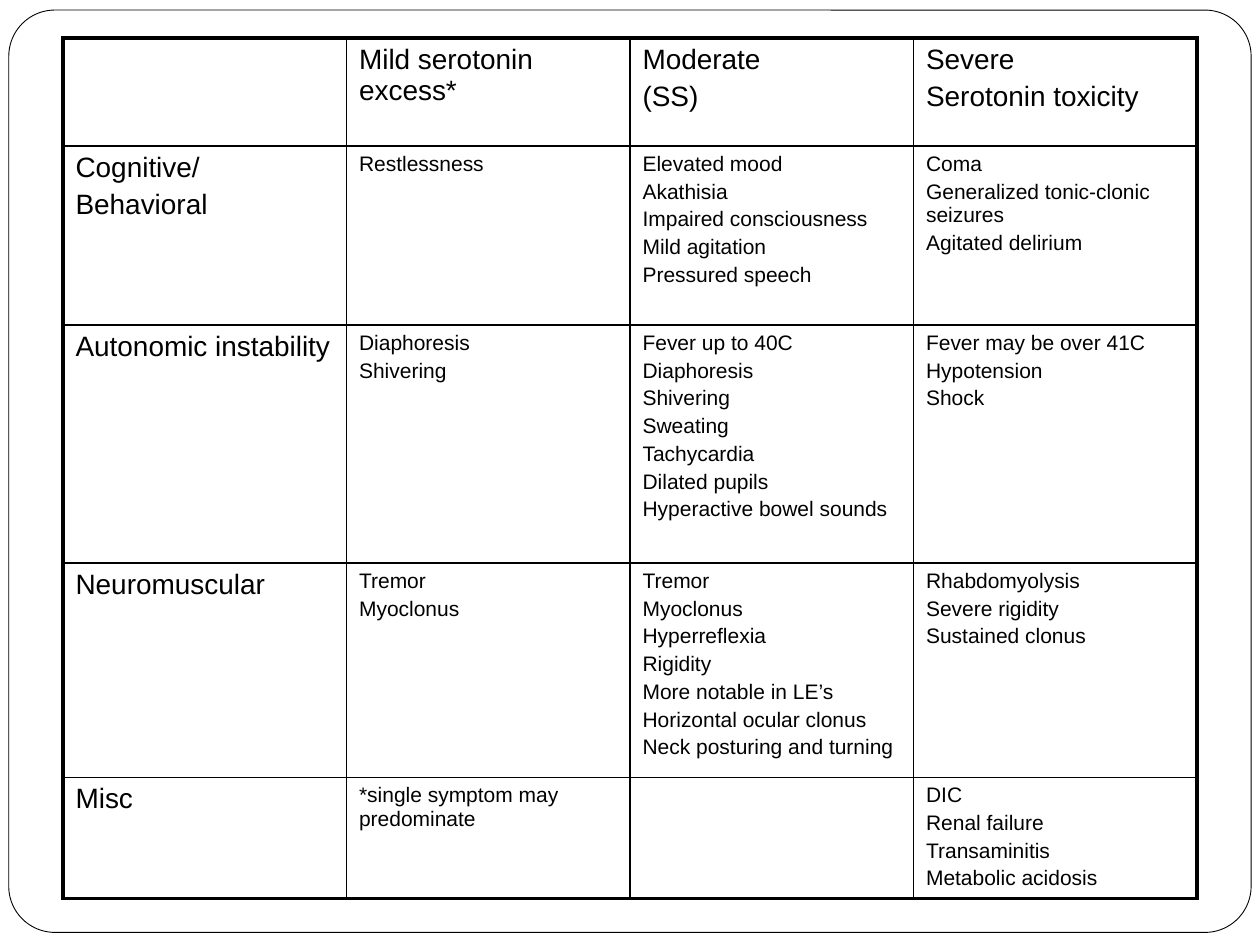
from lxml import etree
from pptx import Presentation
from pptx.dml.color import RGBColor
from pptx.enum.shapes import MSO_SHAPE
from pptx.oxml.ns import qn
from pptx.util import Inches, Pt

ROUND = MSO_SHAPE.ROUNDED_RECTANGLE
COLORS = {"ink": "000000", "paper": "FFFFFF"}
HEAD, BODY = 16, 12
THIN, THICK = 1, 2.25
COL = 2.25
ROWS = [0.86, 1.42, 1.89, 1.7, 0.96]
GRID = [
    [[], ["Mild serotonin excess*"], ["Moderate", "(SS)"],
     ["Severe", "Serotonin toxicity"]],
    [["Cognitive/", "Behavioral"], ["Restlessness"],
     ["Elevated mood", "Akathisia", "Impaired consciousness",
      "Mild agitation", "Pressured speech"],
     ["Coma", "Generalized tonic-clonic seizures", "Agitated delirium"]],
    [["Autonomic instability"], ["Diaphoresis", "Shivering"],
     ["Fever up to 40C", "Diaphoresis", "Shivering", "Sweating",
      "Tachycardia", "Dilated pupils", "Hyperactive bowel sounds"],
     ["Fever may be over 41C", "Hypotension", "Shock"]],
    [["Neuromuscular"], ["Tremor", "Myoclonus"],
     ["Tremor", "Myoclonus", "Hyperreflexia", "Rigidity",
      "More notable in LE’s", "Horizontal ocular clonus",
      "Neck posturing and turning"],
     ["Rhabdomyolysis", "Severe rigidity", "Sustained clonus"]],
    [["Misc"], ["*single symptom may predominate"], [],
     ["DIC", "Renal failure", "Transaminitis", "Metabolic acidosis"]],
]


def color(name):
    return RGBColor.from_string(COLORS[name])


def write(frame, lines, size=BODY, font="Arial", ink="ink", gap=0.2):
    """Fill a text frame; gap is the space before, as a share of the size."""
    for i, line in enumerate(lines):
        para = frame.add_paragraph() if i else frame.paragraphs[0]
        para.space_before = Pt(size * gap)
        run = para.add_run()
        run.text = line
        run.font.size = Pt(size)
        run.font.name = font
        run.font.color.rgb = color(ink)


def border(cell, widths):
    """Draw the left, right, top and bottom edges, in that order."""
    props = cell._tc.get_or_add_tcPr()
    for side, width in zip("LRTB", widths):
        edge = etree.SubElement(props, qn(f"a:ln{side}"), w=str(Pt(width)))
        fill = etree.SubElement(edge, qn("a:solidFill"))
        etree.SubElement(fill, qn("a:srgbClr"), val=COLORS["ink"])


class Page:
    def __init__(self, slide):
        self.slide = slide

    def panel(self, left, top, width, height):
        box = self.slide.shapes.add_shape(
            ROUND, Inches(left), Inches(top), Inches(width), Inches(height))
        box.adjustments[0] = 0.05
        box.shadow.inherit = False
        box.fill.solid()
        box.fill.fore_color.rgb = color("paper")
        box.line.color.rgb = color("ink")
        box.line.width = Pt(0.5)

    def table(self, left, top, grid, col, rows):
        count = len(grid[0])
        table = self.slide.shapes.add_table(
            len(grid), count, Inches(left), Inches(top),
            Inches(col * count), Inches(sum(rows))).table
        table.first_row = table.horz_banding = False
        for column in table.columns:
            column.width = Inches(col)
        for r, (height, texts) in enumerate(zip(rows, grid)):
            table.rows[r].height = Inches(height)
            for c, lines in enumerate(texts):
                cell = table.cell(r, c)
                outer = (c == 0, c == count - 1, r == 0, r == len(grid) - 1)
                border(cell, [THICK if rim else THIN for rim in outer])
                cell.fill.background()
                note = lines and lines[0].startswith("*")
                write(cell.text_frame, lines,
                      size=HEAD if r == 0 or c == 0 else BODY,
                      gap=0.5 if note else 0.2)


def main():
    deck = Presentation()
    deck.slide_width, deck.slide_height = Inches(10), Inches(7.5)
    page = Page(deck.slides.add_slide(deck.slide_layouts[6]))
    page.panel(0.07, 0.08, 9.86, 7.32)
    page.table(0.5, 0.3, GRID, COL, ROWS)
    deck.save("out.pptx")


if __name__ == "__main__":
    main()
